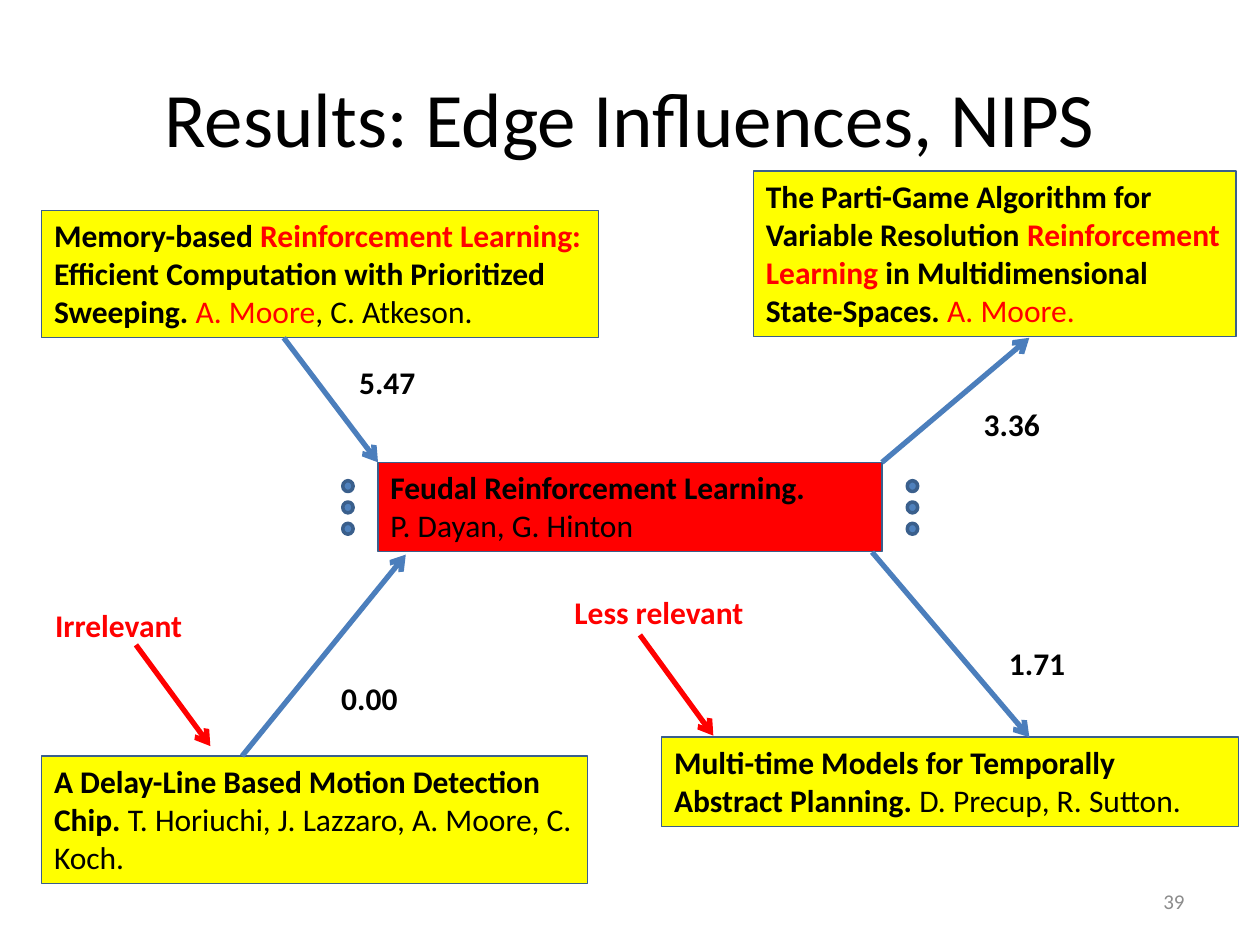
from dataclasses import dataclass

import pptx
import pptx.dml.color
import pptx.enum.shapes
import pptx.enum.text
import pptx.oxml
import pptx.oxml.ns
import pptx.util
from pptx.util import Cm

RGBColor = pptx.dml.color.RGBColor
ALIGN = pptx.enum.text.PP_ALIGN
ANCHOR = pptx.enum.text.MSO_ANCHOR
SHAPE = pptx.enum.shapes.MSO_SHAPE

BLACK = RGBColor(0x00, 0x00, 0x00)
RED = RGBColor(0xFF, 0x00, 0x00)
YELLOW = RGBColor(0xFF, 0xFF, 0x00)
GREY = RGBColor(0x8C, 0x8C, 0x8C)
ARROW_BLUE = RGBColor(0x4B, 0x7E, 0xBC)
DOT_BLUE = RGBColor(0x4F, 0x81, 0xBD)
BORDER = RGBColor(0x3A, 0x5F, 0x8C)


@dataclass
class Span:
    text: str
    bold: bool = True
    color: RGBColor = BLACK


@dataclass
class Paper:
    """A box with a paper's title and authors; lengths in centimetres."""
    left: float
    top: float
    width: float
    height: float
    paragraphs: list[list[Span]]
    fill: RGBColor = YELLOW


@dataclass
class Label:
    left: float
    top: float
    width: float
    span: Span


@dataclass
class Arrow:
    start: tuple[float, float]
    end: tuple[float, float]
    color: RGBColor = ARROW_BLUE


PAPERS = [
    Paper(13.34, 14.86, 11.63, 1.8, [[
        Span("Multi-time Models for Temporally Abstract Planning."),
        Span(" D. Precup, R. Sutton.", False)]]),
    Paper(7.62, 9.32, 10.16, 1.8, [
        [Span("Feudal Reinforcement Learning.")],
        [Span("P. Dayan, G. Hinton", False)]], RED),
    Paper(0.84, 4.24, 11.23, 2.57, [[
        Span("Memory-based "),
        Span("Reinforcement Learning: ", color=RED),
        Span("Efficient Computation with Prioritized Sweeping. "),
        Span("A. Moore", False, RED),
        Span(", C. Atkeson.", False)]]),
    Paper(0.84, 15.24, 11, 2.57, [[
        Span("A Delay-Line Based Motion Detection Chip. "),
        Span("T. Horiuchi, J. Lazzaro, A. Moore, C. Koch.", False)]]),
    Paper(15.19, 3.45, 9.73, 3.34, [[
        Span("The Parti-Game Algorithm for Variable Resolution "),
        Span("Reinforcement Learning ", color=RED),
        Span("in Multidimensional State-Spaces. "),
        Span("A. Moore.", False, RED)]]),
]

LABELS = [
    Label(6.99, 7.19, 2.74, Span("5.47")),
    Label(6.63, 13.56, 2.74, Span("0.00")),
    Label(19.58, 8.05, 2.74, Span("3.36")),
    Label(20.09, 12.85, 2.74, Span("1.71")),
    Label(0.86, 12.09, 5.61, Span("Irrelevant", color=RED)),
    Label(11.33, 11.84, 4.01, Span("Less relevant", color=RED)),
]

ARROWS = [
    Arrow((5.72, 6.81), (7.62, 9.32)),
    Arrow((4.88, 15.24), (8.18, 11.18)),
    Arrow((17.78, 9.32), (20.75, 6.81)),
    Arrow((17.58, 11.13), (20.75, 14.86)),
    Arrow((2.74, 13), (4.24, 15.04), RED),
    Arrow((12.9, 12.8), (14.38, 14.83), RED),
]

DOT_COLUMNS = (6.91, 18.29)
DOT_TOP, DOT_STEP, DOT_COUNT = 9.69, 0.43, 3


def format_span(span, size: float, color: RGBColor, bold: bool = False) -> None:
    span.font.name = "Calibri"
    span.font.size = pptx.util.Pt(size)
    span.font.bold = bold
    span.font.color.rgb = color


def add_spans(para, spans: list[Span]) -> None:
    para.alignment = ALIGN.LEFT
    for part in spans:
        span = para.add_run()
        span.text = part.text
        format_span(span, 18, part.color, part.bold)


def add_filled(page, kind, left, top, width, height, fill: RGBColor, line: float):
    box = page.shapes.add_shape(kind, Cm(left), Cm(top), Cm(width), Cm(height))
    box.shadow.inherit = False
    box.fill.solid()
    box.fill.fore_color.rgb = fill
    box.line.color.rgb = BORDER
    box.line.width = pptx.util.Pt(line)
    return box


def add_paper(page, paper: Paper) -> None:
    box = add_filled(page, SHAPE.RECTANGLE, paper.left, paper.top,
                     paper.width, paper.height, paper.fill, 0.75)
    frame = box.text_frame
    frame.word_wrap = True
    frame.vertical_anchor = ANCHOR.TOP
    for index, spans in enumerate(paper.paragraphs):
        para = frame.add_paragraph() if index else frame.paragraphs[0]
        add_spans(para, spans)


def add_label(page, label: Label) -> None:
    box = page.shapes.add_textbox(Cm(label.left), Cm(label.top), Cm(label.width), Cm(1.02))
    box.text_frame.word_wrap = True
    add_spans(box.text_frame.paragraphs[0], [label.span])


def add_arrow(page, arrow: Arrow) -> None:
    line = page.shapes.add_connector(
        pptx.enum.shapes.MSO_CONNECTOR.STRAIGHT,
        *(Cm(value) for value in arrow.start + arrow.end))
    line.line.color.rgb = arrow.color
    line.line.width = pptx.util.Pt(3)
    outline = line.line._get_or_add_ln()
    head = pptx.oxml.parse_xml(
        f'<a:tailEnd {pptx.oxml.ns.nsdecls("a")} type="arrow"/>')
    outline.append(head)
    properties = outline.getparent()
    properties.append(pptx.oxml.parse_xml(f'<a:effectLst {pptx.oxml.ns.nsdecls("a")}/>'))


def add_title(page) -> None:
    title = page.shapes.title
    title.left, title.top, title.width, title.height = Cm(1.27), Cm(0.76), Cm(22.86), Cm(3.18)
    title.text_frame.text = "Results: Edge Influences, NIPS"
    title.text_frame.vertical_anchor = ANCHOR.MIDDLE
    para = title.text_frame.paragraphs[0]
    para.alignment = ALIGN.CENTER
    format_span(para.runs[0], 44, BLACK)


def add_page_number(page) -> None:
    box = page.shapes.add_textbox(Cm(18.2), Cm(17.65), Cm(5.93), Cm(1.02))
    box.text_frame.text = "39"
    box.text_frame.word_wrap = True
    box.text_frame.vertical_anchor = ANCHOR.MIDDLE
    para = box.text_frame.paragraphs[0]
    para.alignment = ALIGN.RIGHT
    format_span(para.runs[0], 12, GREY)


def main() -> None:
    deck = pptx.Presentation()
    deck.slide_width, deck.slide_height = Cm(25.4), Cm(19.05)
    page = deck.slides.add_slide(deck.slide_layouts[5])

    add_title(page)
    add_page_number(page)

    # Papers and the influences between them
    for paper in PAPERS:
        add_paper(page, paper)
    for arrow in ARROWS:
        add_arrow(page, arrow)
    for label in LABELS:
        add_label(page, label)

    # Dots standing for further papers on each side
    for left in DOT_COLUMNS:
        for row in range(DOT_COUNT):
            add_filled(page, SHAPE.OVAL, left, DOT_TOP + row * DOT_STEP,
                       0.21, 0.22, DOT_BLUE, 2)

    deck.save("out.pptx")


if __name__ == "__main__":
    main()
